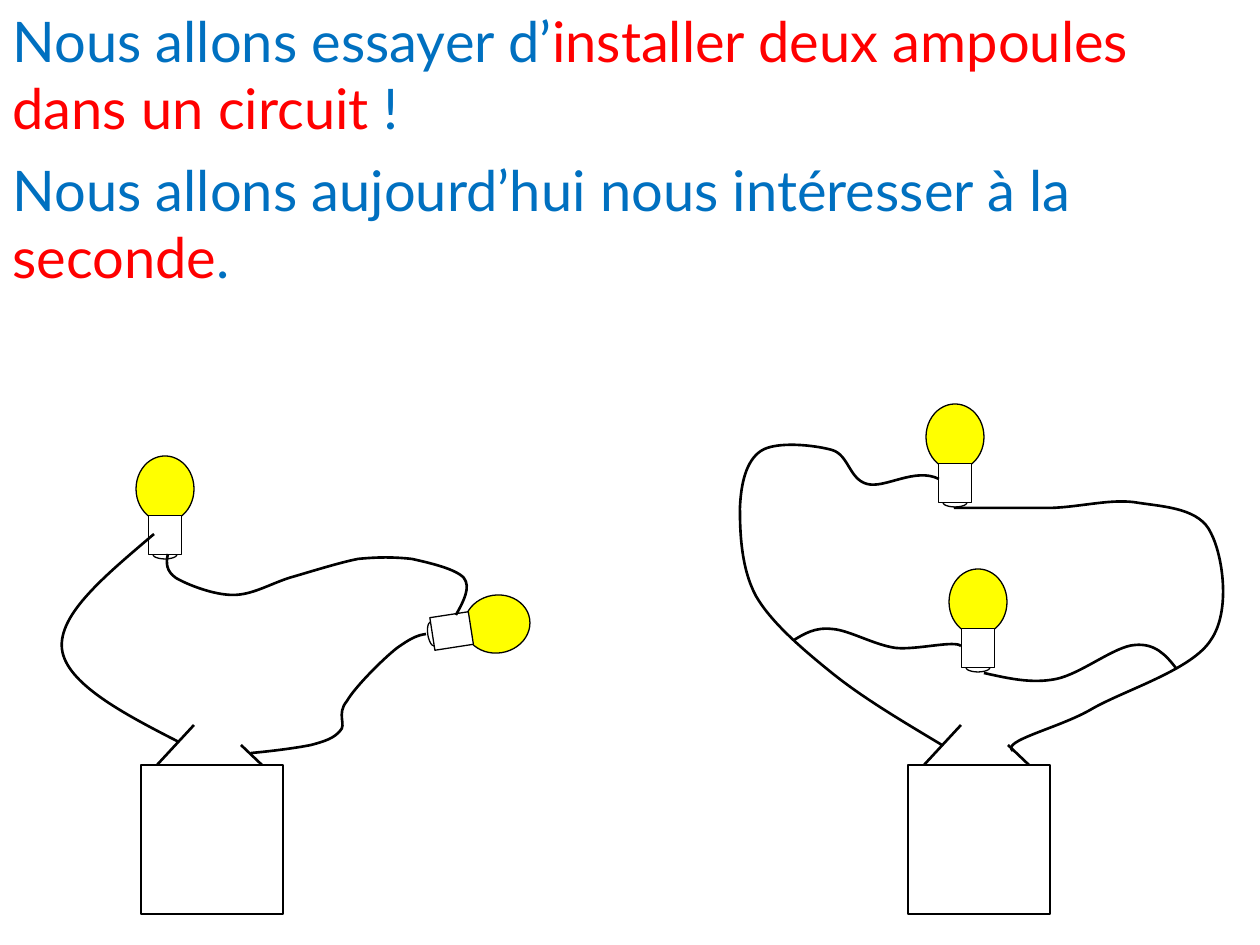
from math import cos, radians, sin

from lxml.etree import SubElement
from pptx import Presentation
from pptx.dml.color import RGBColor
from pptx.enum.shapes import MSO_CONNECTOR, MSO_SHAPE
from pptx.enum.text import MSO_AUTO_SIZE
from pptx.oxml.ns import qn
from pptx.util import Emu, Pt

BLUE = RGBColor(0x00, 0x70, 0xC0)
RED = RGBColor(0xFF, 0x00, 0x00)
YELLOW = RGBColor(0xFF, 0xFF, 0x00)
WHITE = RGBColor(0xFF, 0xFF, 0xFF)
BLACK = RGBColor(0x00, 0x00, 0x00)

SCALE = 914400 / 126
WIDTH, HEIGHT = 1260, 945
THIN, THICK = 0.75, 1.5

SENTENCES = [
    [("Nous allons essayer d’", BLUE),
     ("installer deux ampoules dans un circuit", RED),
     (" !", BLUE)],
    [("Nous allons aujourd’hui nous intéresser à la ", BLUE),
     ("seconde", RED),
     (".", BLUE)],
]

PARALLEL_WIRES = [
    [(942, 745), (902, 721), (863, 698), (832, 673), (801, 648), (771, 622), (756, 596),
     (741, 568), (740, 532), (740, 508), (741, 484), (746, 461), (761, 451),
     (776, 441), (814, 445), (832, 450), (849, 455), (849, 479), (867, 484),
     (885, 489), (915, 467), (939, 479)],
    [(794, 640), (804, 634), (815, 627), (832, 629), (849, 630), (874, 645), (896, 648),
     (917, 650), (955, 640), (961, 646)],
    [(954, 508), (987, 508), (1021, 508), (1051, 508), (1082, 507), (1113, 498), (1139, 503),
     (1167, 507), (1200, 509), (1211, 533), (1223, 556), (1231, 611), (1211, 640),
     (1192, 670), (1125, 690), (1092, 709), (1060, 728), (1000, 741), (1013, 751)],
    [(984, 673), (1007, 678), (1031, 684), (1056, 679), (1081, 674), (1115, 646), (1135, 645),
     (1155, 643), (1166, 655), (1176, 668)],
]

SERIES_WIRES = [
    [(168, 554), (166, 563), (166, 571), (176, 578), (188, 585), (214, 595), (233, 595),
     (252, 595), (268, 585), (289, 578), (310, 572), (338, 563), (358, 559),
     (378, 557), (394, 557), (412, 559), (430, 563), (456, 569), (464, 578),
     (471, 587), (464, 601), (456, 615)],
    [(426, 634), (418, 635), (411, 638), (397, 648), (383, 659), (355, 687), (347, 701),
     (336, 714), (347, 725), (340, 731), (334, 738), (326, 741), (311, 745),
     (296, 748), (273, 751), (251, 753)],
    [(179, 742), (122, 713), (66, 683), (62, 649), (58, 614), (106, 575), (154, 534)],
]


def px(length):
    """Turn a length in px into EMU."""
    return Emu(round(length * SCALE))


class CircuitPage:
    """Hold the style and the current slide, and draw each kind of element."""

    font, size = "Lato", Pt(32)

    def __init__(self, page):
        """Keep the slide to draw on."""
        self.page = page

    def sentence(self, top, spans):
        """Write one full-width sentence from coloured spans."""
        box = self.page.shapes.add_textbox(px(0), px(top), px(WIDTH), px(149))
        frame = box.text_frame
        frame.word_wrap = True
        frame.auto_size = MSO_AUTO_SIZE.SHAPE_TO_FIT_TEXT
        for text, color in spans:
            span = frame.paragraphs[0].add_run()
            span.text = text
            span.font.name, span.font.size = self.font, self.size
            span.font.color.rgb = color

    def outline(self, shape, weight):
        """Give a shape or connector a black line."""
        shape.line.color.rgb = BLACK
        shape.line.width = Pt(weight)

    def solid(self, group, kind, center, size, fill, weight, angle=0):
        """Add a filled preset shape around its centre."""
        (x, y), (width, height) = center, size
        shape = group.shapes.add_shape(
            kind, px(x - width / 2), px(y - height / 2), px(width), px(height))
        shape.rotation = angle
        shape.shadow.inherit = False
        shape.fill.solid()
        shape.fill.fore_color.rgb = fill
        self.outline(shape, weight)

    def terminal(self, group, start, end):
        """Add a straight battery terminal."""
        line = group.shapes.add_connector(
            MSO_CONNECTOR.STRAIGHT, *(px(value) for value in start + end))
        self.outline(line, THICK)
        SubElement(line.element.spPr, qn("a:effectLst"))

    def battery(self, group, left):
        """Add a battery with its two terminals."""
        top = 765
        self.solid(group, MSO_SHAPE.RECTANGLE, (left + 71, top + 74.5), (142, 149), WHITE, THICK)
        self.terminal(group, (left + 16, top), (left + 53, top - 40))
        self.terminal(group, (left + 100, top - 20), (left + 121, top))

    def bulb(self, group, center, angle):
        """Add a bulb turned around the centre of its globe."""
        parts = [
            (MSO_SHAPE.OVAL, 0, (58, 66), YELLOW),
            (MSO_SHAPE.OVAL, 65, (25, 10), WHITE),
            (MSO_SHAPE.RECTANGLE, 46, (33, 39), WHITE),
        ]
        turn = radians(angle)
        for kind, distance, size, fill in parts:
            middle = center[0] - distance * sin(turn), center[1] + distance * cos(turn)
            self.solid(group, kind, middle, size, fill, THIN, angle)

    def wire(self, group, points):
        """Add a wire of cubic curves through a start and triples of points."""
        builder = group.shapes.build_freeform(*points[0], scale=SCALE)
        builder.add_line_segments(points[1:], close=False)
        shape = builder.convert_to_shape()
        shape.shadow.inherit = False
        shape.fill.background()
        self.outline(shape, THICK)
        segments = list(shape.element.iter(qn("a:lnTo")))
        outline = segments[0].getparent()
        for index in range(0, len(segments), 3):
            curve = SubElement(outline, qn("a:cubicBezTo"))
            for segment in segments[index:index + 3]:
                curve.append(segment[0])
                outline.remove(segment)

    def circuit(self, battery_left, bulbs, wires):
        """Add a grouped circuit of battery, bulbs and wires."""
        group = self.page.shapes.add_group_shape()
        self.battery(group, battery_left)
        for center, angle in bulbs:
            self.bulb(group, center, angle)
        for points in wires:
            self.wire(group, points)


def main():
    """Build the slide and save the deck."""
    deck = Presentation()
    deck.slide_width, deck.slide_height = px(WIDTH), px(HEIGHT)
    page = CircuitPage(deck.slides.add_slide(deck.slide_layouts[6]))
    for index, spans in enumerate(SENTENCES):
        page.sentence(index * 149, spans)
    page.circuit(908, [((978, 602), 0), ((955, 437), 0)], PARALLEL_WIRES)
    page.circuit(141, [((165, 489), 0), ((497, 624), 81.2)], SERIES_WIRES)
    deck.save("out.pptx")


if __name__ == "__main__":
    main()
